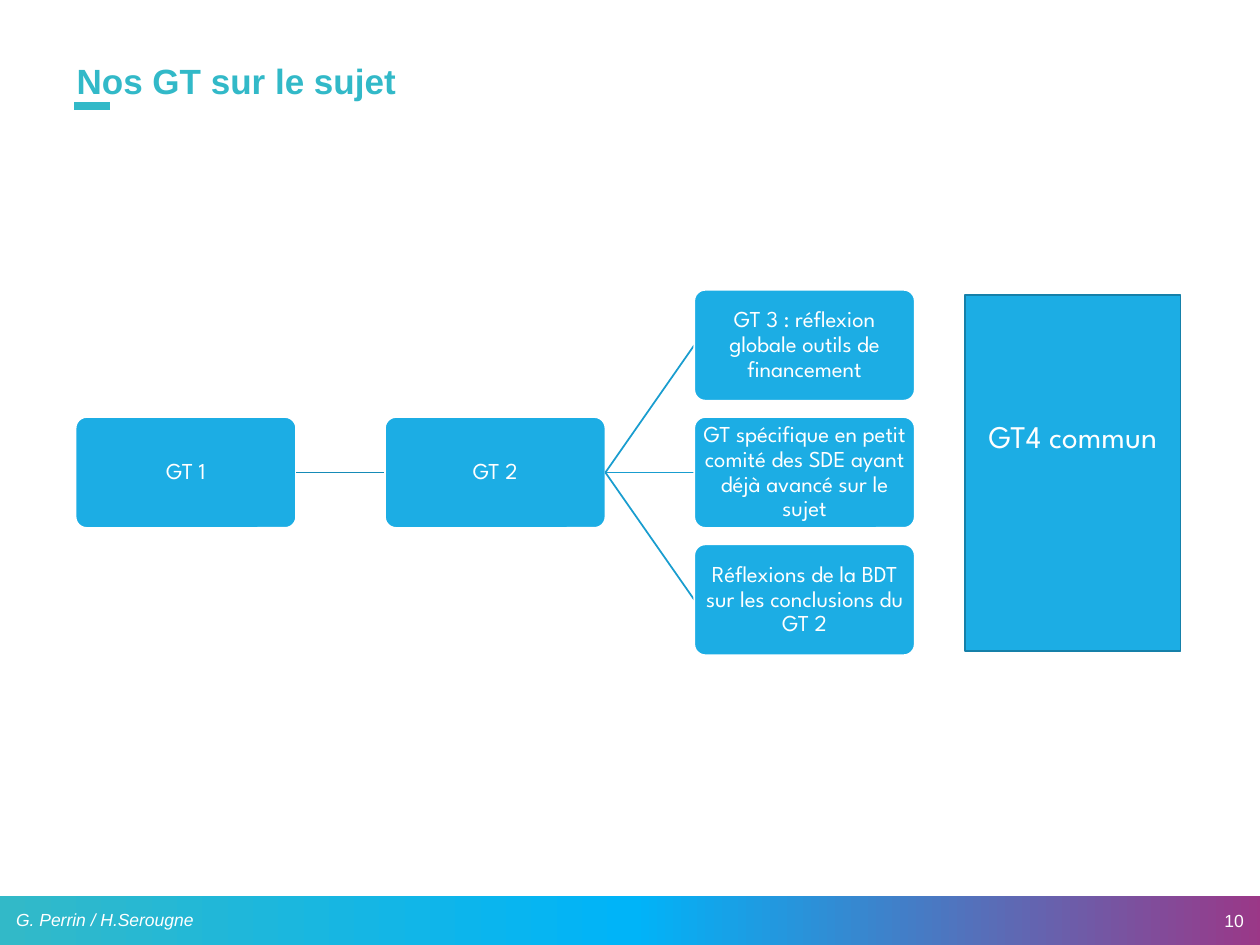
from copy import deepcopy

from lxml.etree import SubElement
from pptx import Presentation
from pptx.dml.color import RGBColor
from pptx.enum.shapes import MSO_CONNECTOR as Connector, MSO_SHAPE as Shape
from pptx.enum.text import MSO_ANCHOR as Anchor, PP_ALIGN as Align
from pptx.oxml.ns import qn
from pptx.util import Inches, Pt

TEAL = RGBColor(0x32, 0xB9, 0xC8)
AZURE = RGBColor(0x00, 0xB4, 0xF8)
PURPLE = RGBColor(0x9B, 0x37, 0x87)
BLUE = RGBColor(0x1C, 0xAD, 0xE4)
BLUE_EDGE = RGBColor(0x15, 0x80, 0xA9)
LINK = RGBColor(0x16, 0x8B, 0xB7)
BRANCH = RGBColor(0x19, 0x9D, 0xCF)
WHITE = RGBColor(0xFF, 0xFF, 0xFF)

BODY_FONT = "League Spartan"
BOX_WIDTH, BOX_HEIGHT = 1.75, 0.88
LEFT, MIDDLE = 0.6, 3.75
COLUMN_STEP, ROW_STEP = 2.455, 1.01

# Work groups by column, each column centred on the middle line
COLUMNS = [
    ["GT 1"],
    ["GT 2"],
    [
        "GT 3 : réflexion globale outils de financement",
        "GT spécifique en petit comité des SDE ayant déjà avancé sur le sujet",
        "Réflexions de la BDT sur les conclusions du GT 2",
    ],
]


def write(shape, text, size, font="Arial", color=WHITE, align=Align.LEFT,
          bold=False, italic=False, spacing=None):
    frame = shape.text_frame
    frame.word_wrap = True
    frame.vertical_anchor = Anchor.MIDDLE
    paragraph = frame.paragraphs[0]
    paragraph.alignment = align
    if spacing:
        paragraph.line_spacing = spacing
    run = paragraph.add_run()
    run.text = text
    run.font.name = font
    run.font.size = Pt(size)
    run.font.color.rgb = color
    run.font.bold = bold
    run.font.italic = italic
    return frame


def add_text(slide, left, top, width, height, text, size, **style):
    box = slide.shapes.add_textbox(
        Inches(left), Inches(top), Inches(width), Inches(height))
    write(box, text, size, **style)


def add_box(slide, kind, left, top, width, height, edge):
    shape = slide.shapes.add_shape(
        kind, Inches(left), Inches(top), Inches(width), Inches(height))
    shape.shadow.inherit = False
    shape.fill.solid()
    shape.fill.fore_color.rgb = BLUE
    shape.line.color.rgb = edge
    shape.line.width = Pt(1)
    return shape


def add_work_group(slide, left, center, text):
    shape = add_box(slide, Shape.ROUNDED_RECTANGLE, left,
                    center - BOX_HEIGHT / 2, BOX_WIDTH, BOX_HEIGHT, WHITE)
    shape.adjustments[0] = 0.1
    frame = write(shape, text, 13, font=BODY_FONT, align=Align.CENTER,
                  spacing=0.9)
    frame.margin_left = frame.margin_right = Inches(0.04)
    frame.margin_top = frame.margin_bottom = Inches(0.04)


def add_line(slide, start, end, color, width=1):
    line = slide.shapes.add_connector(
        Connector.STRAIGHT, *(Inches(value) for value in (*start, *end)))
    line.line.color.rgb = color
    line.line.width = Pt(width)
    SubElement(line._element.spPr, qn("a:effectLst"))


def add_gradient_bar(slide):
    bar = slide.shapes.add_shape(
        Shape.RECTANGLE, 0, Inches(7.11), Inches(10.04), Inches(0.39))
    bar.shadow.inherit = False
    bar.line.fill.background()
    bar.fill.gradient()
    bar.fill.gradient_angle = 0
    # The default gradient has two stops; a third is needed
    first = bar._element.spPr.find(".//" + qn("a:gs"))
    first.addnext(deepcopy(first))
    stops = zip(bar.fill.gradient_stops, (0, 0.5, 1), (TEAL, AZURE, PURPLE))
    for stop, position, color in stops:
        stop.position = position
        stop.color.rgb = color


def row_centers(count):
    return [MIDDLE + (row - (count - 1) / 2) * ROW_STEP for row in range(count)]


def add_tree(slide):
    for index, texts in enumerate(COLUMNS):
        left = LEFT + index * COLUMN_STEP
        color = LINK if index == 1 else BRANCH
        for center, text in zip(row_centers(len(texts)), texts):
            if index:
                start = (left - COLUMN_STEP + BOX_WIDTH, MIDDLE)
                add_line(slide, start, (left, center), color)
            add_work_group(slide, left, center, text)


def main():
    presentation = Presentation()
    presentation.slide_width = Inches(10)
    presentation.slide_height = Inches(7.5)
    slide = presentation.slides.add_slide(presentation.slide_layouts[6])

    # Title and its accent
    add_line(slide, (0.59, 0.84), (0.87, 0.84), TEAL, 4.5)
    add_text(slide, 0.51, 0.4, 8.8, 0.52, "Nos GT sur le sujet", 20,
             color=TEAL, bold=True, spacing=0.9)

    # Work groups, then the shared one with its text above the middle
    add_tree(slide)
    shared = add_box(slide, Shape.RECTANGLE, 7.66, 2.34, 1.71, 2.83, BLUE_EDGE)
    frame = write(shared, "GT4 commun", 18, font=BODY_FONT, align=Align.CENTER)
    frame.margin_bottom = Inches(0.64)

    # Footer
    add_gradient_bar(slide)
    add_text(slide, 7.72, 7.11, 2.25, 0.4, "10", 10, align=Align.RIGHT)
    add_text(slide, 0.03, 7.1, 2.25, 0.4, "G. Perrin / H.Serougne", 10,
             italic=True)

    presentation.save("out.pptx")


if __name__ == "__main__":
    main()
